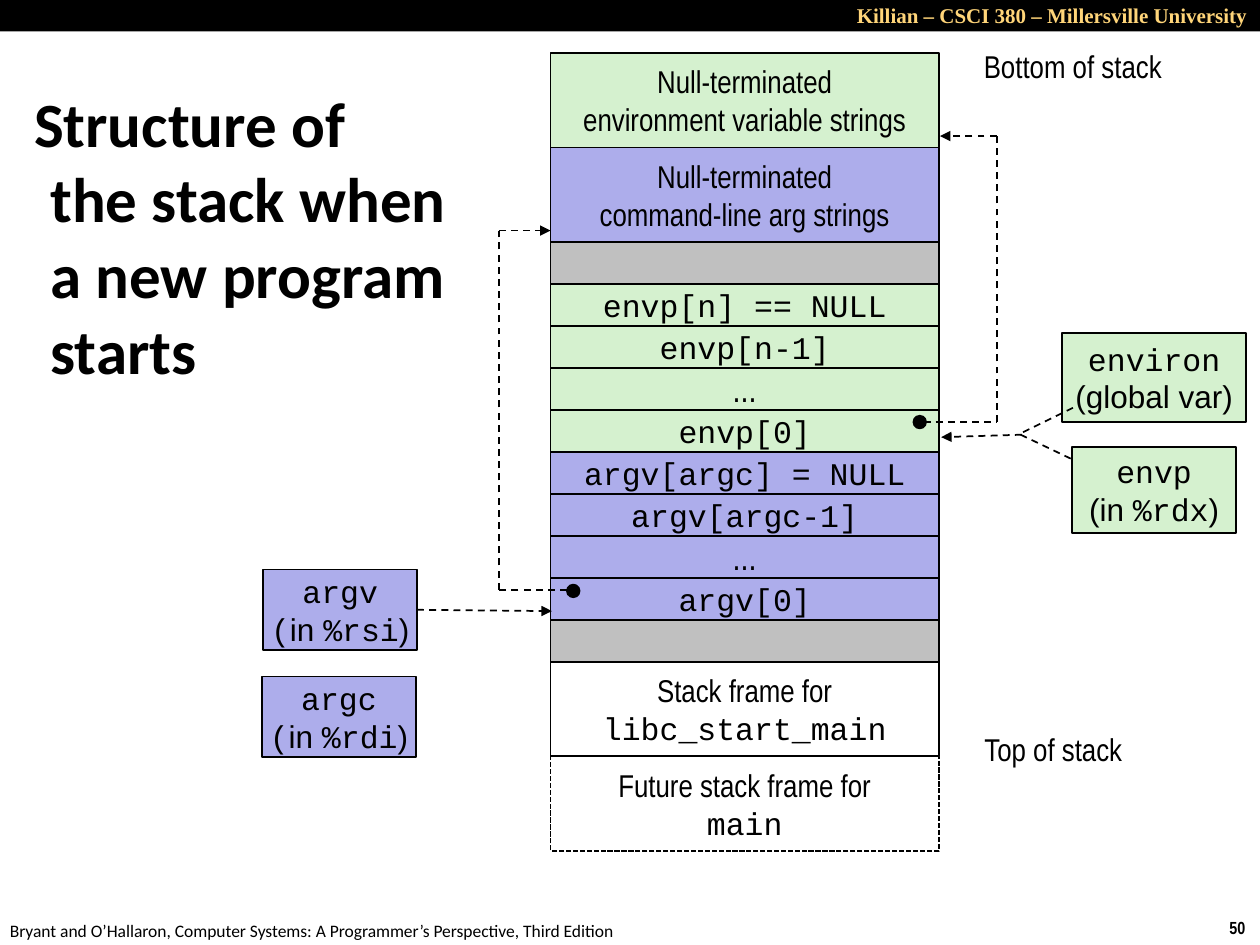
from pptx import Presentation
from pptx.util import Inches, Pt
from pptx.dml.color import RGBColor
from pptx.enum.dml import MSO_LINE
from pptx.enum.shapes import MSO_CONNECTOR, MSO_SHAPE
from pptx.enum.text import MSO_ANCHOR, MSO_AUTO_SIZE, PP_ALIGN
from pptx.oxml.ns import qn
from lxml import etree

BLACK = RGBColor(0x00, 0x00, 0x00)
GREEN = RGBColor(0xD5, 0xF1, 0xCF)
VIOLET = RGBColor(0xAD, 0xAD, 0xEB)
GRAY = RGBColor(0xC0, 0xC0, 0xC0)
GOLD = RGBColor(0xFF, 0xD5, 0x79)
RECT, OVAL = MSO_SHAPE.RECTANGLE, MSO_SHAPE.OVAL
STRAIGHT = MSO_CONNECTOR.STRAIGHT
DASH, SYS_DASH = MSO_LINE.DASH, MSO_LINE.SQUARE_DOT
LEFT, CENTER, RIGHT = PP_ALIGN.LEFT, PP_ALIGN.CENTER, PP_ALIGN.RIGHT
TOP, MIDDLE = MSO_ANCHOR.TOP, MSO_ANCHOR.MIDDLE
NO_FIT = MSO_AUTO_SIZE.NONE
NARROW, MONO, SANS = "Arial Narrow", "Courier New", "Arial"

prs = Presentation()
prs.slide_width, prs.slide_height = Inches(10), Inches(7.5)
s = prs.slides.add_slide(prs.slide_layouts[5])


def write(sp, lines, size=18, color=BLACK, bold=False, align=CENTER, anchor=MIDDLE):
    """Fill a shape with lines, each a list of (text, font name) runs."""
    tf = sp.text_frame
    tf.word_wrap = False
    tf.vertical_anchor = anchor
    for i, runs in enumerate(lines):
        p = tf.paragraphs[0] if i == 0 else tf.add_paragraph()
        p.alignment = align
        for text, font in runs:
            r = p.add_run()
            r.text = text
            r.font.name, r.font.size = font, Pt(size)
            r.font.bold, r.font.color.rgb = bold, color


def add_box(x, y, w, h, fill, shape=RECT):
    sp = s.shapes.add_shape(shape, Inches(x), Inches(y), Inches(w), Inches(h))
    sp.shadow.inherit = False
    if fill is None:
        sp.fill.background()
    else:
        sp.fill.solid()
        sp.fill.fore_color.rgb = fill
    sp.line.color.rgb, sp.line.width = BLACK, Pt(1)
    return sp


# Header bar, footer and free labels
header = add_box(0, 0, 10, 0.25, BLACK)
header.line.fill.background()
labels = [
    (5.83, -0.03, 4.17, 0.3, "Killian – CSCI 380 – Millersville University",
     "Times New Roman", 12, GOLD, True, RIGHT, TOP),
    (9.66, 7.23, 0.34, 0.27, "50", NARROW, 10, BLACK, True, LEFT, TOP),
    (-0.02, 7.25, 5.08, 0.27,
     "Bryant and O’Hallaron, Computer Systems: A Programmer’s Perspective, Third Edition",
     "Calibri", 10, BLACK, False, LEFT, TOP),
    (7.7, 0.32, 1.63, 0.4, "Bottom of stack", NARROW, 18, BLACK, False, CENTER, MIDDLE),
    (7.69, 5.74, 1.34, 0.4, "Top of stack", NARROW, 18, BLACK, False, CENTER, MIDDLE),
]
for x, y, w, h, text, font, size, color, bold, align, anchor in labels:
    tb = s.shapes.add_textbox(Inches(x), Inches(y), Inches(w), Inches(h))
    write(tb, [[(text, font)]], size, color, bold, align, anchor)

# Title with a hanging indent
title = s.shapes.title
title.left, title.top = Inches(0.17), Inches(0.83)
title.width, title.height = Inches(3.57), Inches(2.08)
tf = title.text_frame
tf.word_wrap, tf.auto_size, tf.vertical_anchor = True, NO_FIT, MIDDLE
p = tf.paragraphs[0]
p.alignment = LEFT
pPr = p._p.get_or_add_pPr()
pPr.set("marL", str(Inches(0.13)))
pPr.set("indent", str(-Inches(0.13)))
for i, text in enumerate(["Structure of", "the stack when a new program starts"]):
    if i:
        p.add_line_break()
    r = p.add_run()
    r.text = text
    r.font.name, r.font.size = "Calibri", Pt(36)
    r.font.bold, r.font.color.rgb = True, BLACK

# The stack, from its bottom (high addresses) down
TALL, ROW = 0.75, 1 / 3
stack = [
    (TALL, GREEN, [[("Null-terminated", NARROW)], [("environment variable strings", NARROW)]]),
    (TALL, VIOLET, [[("Null-terminated", NARROW)], [("command-line arg strings", NARROW)]]),
    (ROW, GRAY, []),
    (ROW, GREEN, [[("envp[n] == NULL", MONO)]]),
    (ROW, GREEN, [[("envp[n-1]", MONO)]]),
    (ROW, GREEN, [[("...", NARROW)]]),
    (ROW, GREEN, [[("envp[0]", MONO)]]),
    (ROW, VIOLET, [[("argv[argc] = NULL", MONO)]]),
    (ROW, VIOLET, [[("argv[argc-1]", MONO)]]),
    (ROW, VIOLET, [[("...", NARROW)]]),
    (ROW, VIOLET, [[("argv[0]", MONO)]]),
    (ROW, GRAY, []),
    (TALL, None, [[("Stack frame for", NARROW)], [("libc_start_main", MONO)]]),
    (TALL, None, [[("Future stack frame for", NARROW)], [("main", MONO)]]),
]
y = 0.42
for h, fill, lines in stack:
    sp = add_box(4.37, y, 3.08, h, fill)
    write(sp, lines, 20 if lines == [[("...", NARROW)]] else 18)
    y += h
sp.line.dash_style = SYS_DASH

# Variables and registers beside the stack
environ = add_box(8.43, 2.64, 1.46, 0.71, GREEN)
write(environ, [[("environ", MONO)], [("(global var)", SANS)]])
argv = add_box(2.09, 4.52, 1.22, 0.64, VIOLET)
argc = add_box(2.08, 5.37, 1.22, 0.64, VIOLET)
for sp, name, register in [(argv, "argv", "%rsi"), (argc, "argc", "%rdi")]:
    write(sp, [[(name, MONO)],
               [("(", MONO), ("in ", SANS), (register, MONO), (")", SANS)]])

# Dashed pointers: x1, y1, x2, y2, arrowhead at the end
pointers = [
    (3.31, 4.84, 4.38, 4.85, True),
    (4.5, 4.68, 3.96, 4.68, False),
    (3.96, 4.68, 3.96, 1.83, False),
    (3.96, 1.83, 4.37, 1.83, True),
    (7.33, 3.35, 7.91, 3.35, False),
    (7.91, 3.35, 7.91, 1.08, False),
    (7.91, 1.08, 7.46, 1.08, True),
    (8.1, 3.45, 8.54, 3.66, False),
    (8.12, 3.43, 8.55, 3.22, False),
    (8.11, 3.45, 7.47, 3.47, True),
]
for i, (x1, y1, x2, y2, arrow) in enumerate(pointers):
    c = s.shapes.add_connector(STRAIGHT, Inches(x1), Inches(y1), Inches(x2), Inches(y2))
    if i == 0:
        c.begin_connect(argv, 3)
    c.line.color.rgb, c.line.width, c.line.dash_style = BLACK, Pt(1), DASH
    if arrow:
        etree.SubElement(c.line._get_or_add_ln(), qn("a:tailEnd"), type="triangle")
    etree.SubElement(c._element.spPr, qn("a:effectLst"))

for x, y in [(4.5, 4.64), (7.25, 3.3)]:
    add_box(x, y, 0.1, 0.1, BLACK, OVAL)

# Drawn last so that it covers the end of its pointer
envp = add_box(8.51, 3.55, 1.3, 0.68, GREEN)
write(envp, [[("envp", MONO)], [("(in ", SANS), ("%rdx", MONO), (")", SANS)]])

prs.save("out.pptx")
